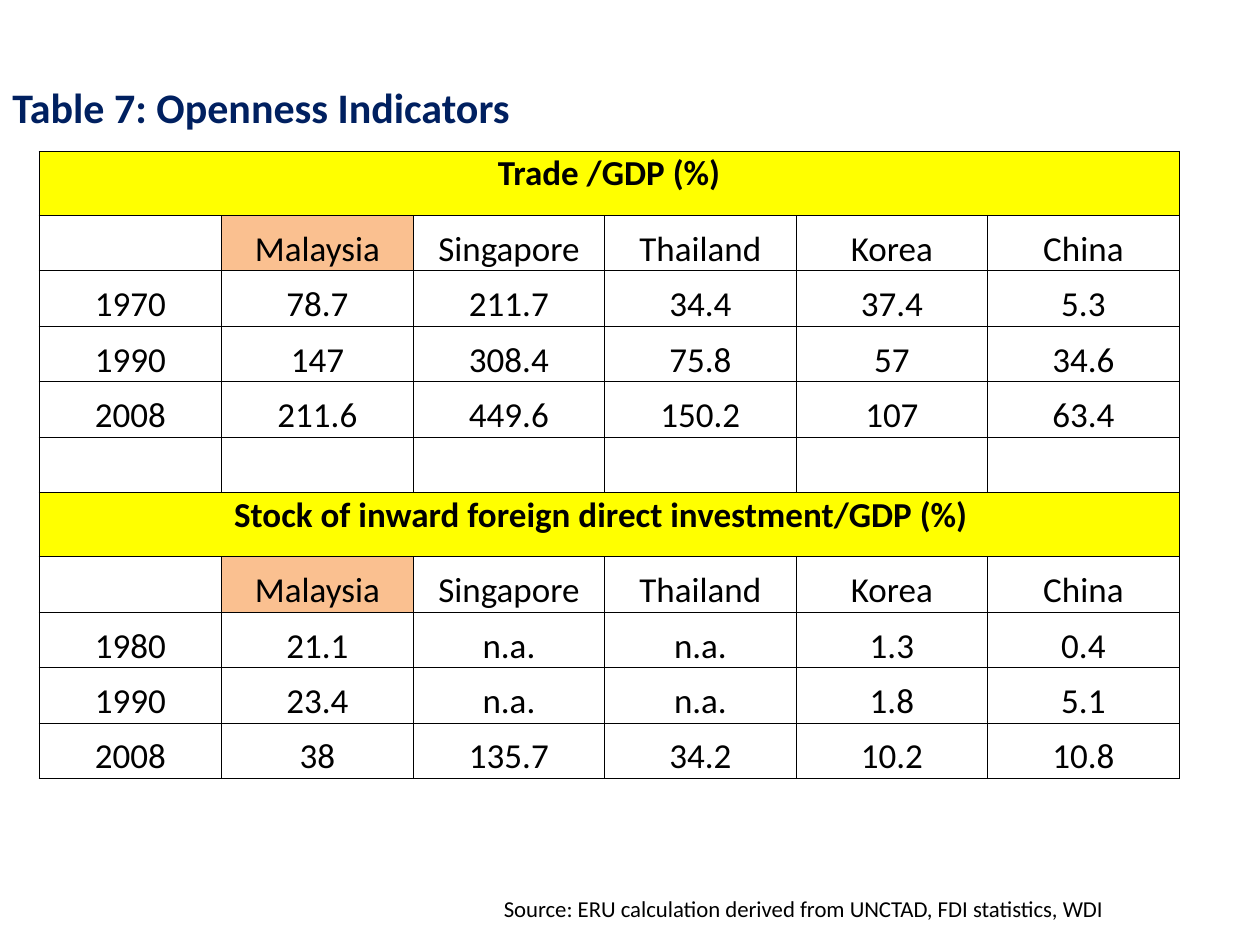
from dataclasses import dataclass

from lxml.etree import SubElement
from pptx import Presentation
from pptx.dml.color import RGBColor
from pptx.enum.text import MSO_ANCHOR as Anchor, PP_ALIGN as Align
from pptx.oxml.ns import qn
from pptx.util import Inches, Pt

SLIDE_W, SLIDE_H = Inches(10), Inches(7.5)
FONT = "Calibri"
BLACK, NAVY, YELLOW, PEACH = "000000", "002060", "FFFF00", "FAC090"
COUNTRIES = ("Malaysia", "Singapore", "Thailand", "Korea", "China")
YEAR_WIDTH, COUNTRY_WIDTH = Inches(1.45), Inches(1.52)
BAND_HEIGHT, ROW_HEIGHT = Inches(0.51), Inches(0.44)
INSET = Inches(0.01)


@dataclass(frozen=True)
class Caption:
    text: str
    left: float
    top: float
    width: float
    height: float
    size: int
    color: str
    bold: bool = False


@dataclass(frozen=True)
class Section:
    heading: str
    years: tuple[tuple[str, ...], ...]
    right_inset: float = 0.01


CAPTIONS = (
    Caption("Table 7: Openness Indicators", 0, 0.08, 1, 0.07, 24, NAVY, True),
    Caption("Source: ERU calculation derived from UNCTAD, FDI statistics, WDI",
            0.39, 0.94, 0.56, 0.04, 13, BLACK),
)
SECTIONS = (
    Section("Trade /GDP (%)", (
        ("1970", "78.7", "211.7", "34.4", "37.4", "5.3"),
        ("1990", "147", "308.4", "75.8", "57", "34.6"),
        ("2008", "211.6", "449.6", "150.2", "107", "63.4"),
    )),
    Section("Stock of inward foreign direct investment/GDP (%)", (
        ("1980", "21.1", "n.a.", "n.a.", "1.3", "0.4"),
        ("1990", "23.4", "n.a.", "n.a.", "1.8", "5.1"),
        ("2008", "38", "135.7", "34.2", "10.2", "10.8"),
    ), 0.14),
)


def rgb(value: str) -> RGBColor:
    return RGBColor.from_string(value)


def set_font(paragraph, size: int, color: str, bold: bool) -> None:
    font = paragraph.font
    font.name, font.size, font.bold = FONT, Pt(size), bold
    font.color.rgb = rgb(color)


def draw_caption(slide, caption: Caption) -> None:
    box = slide.shapes.add_textbox(
        int(SLIDE_W * caption.left), int(SLIDE_H * caption.top),
        int(SLIDE_W * caption.width), int(SLIDE_H * caption.height))
    box.text_frame.word_wrap = True
    paragraph = box.text_frame.paragraphs[0]
    paragraph.text = caption.text
    set_font(paragraph, caption.size, caption.color, caption.bold)


def frame_cell(cell) -> None:
    properties = cell._tc.get_or_add_tcPr()
    for position, side in enumerate(("lnL", "lnR", "lnT", "lnB")):
        for previous in properties.findall(qn(f"a:{side}")):
            properties.remove(previous)
        line = SubElement(properties, qn(f"a:{side}"), w=str(Pt(0.5)))
        fill = SubElement(line, qn("a:solidFill"))
        SubElement(fill, qn("a:srgbClr"), val=BLACK)
        properties.insert(position, line)


def fill_cell(cell, text: str, color: str | None = None, bold: bool = False) -> None:
    if color:
        cell.fill.solid()
        cell.fill.fore_color.rgb = rgb(color)
    else:
        cell.fill.background()
    cell.margin_left = cell.margin_right = cell.margin_top = INSET
    cell.margin_bottom = 0
    cell.vertical_anchor = Anchor.BOTTOM
    paragraph = cell.text_frame.paragraphs[0]
    paragraph.text = text
    paragraph.alignment = Align.CENTER
    set_font(paragraph, 20, BLACK, bold)
    frame_cell(cell)


def draw_row(table, row: int, values: tuple[str, ...]) -> None:
    for column, value in enumerate(values):
        fill_cell(table.cell(row, column), value, PEACH if value == COUNTRIES[0] else None)


def draw_section(table, top: int, section: Section) -> None:
    table.rows[top].height = BAND_HEIGHT
    draw_row(table, top, ("",) * len(table.columns))
    band = table.cell(top, 0)
    band.merge(table.cell(top, len(table.columns) - 1))
    fill_cell(band, section.heading, YELLOW, True)
    band.margin_right = Inches(section.right_inset)
    band.vertical_anchor = Anchor.TOP
    for row, values in enumerate((("", *COUNTRIES), *section.years), top + 1):
        draw_row(table, row, values)


def draw_table(slide) -> None:
    section_rows = 2 + len(SECTIONS[0].years)
    row_count = len(SECTIONS) * (section_rows + 1) - 1
    table = slide.shapes.add_table(
        row_count, 1 + len(COUNTRIES), Inches(0.31), int(SLIDE_H * 0.16),
        YEAR_WIDTH + COUNTRY_WIDTH * len(COUNTRIES), ROW_HEIGHT * row_count).table
    table.first_row = table.horz_banding = False
    for index, column in enumerate(table.columns):
        column.width = COUNTRY_WIDTH if index else YEAR_WIDTH
    for row in table.rows:
        row.height = ROW_HEIGHT
    for index, section in enumerate(SECTIONS):
        draw_section(table, index * (section_rows + 1), section)
    draw_row(table, section_rows, ("",) * len(table.columns))


def main() -> None:
    deck = Presentation()
    deck.slide_width, deck.slide_height = SLIDE_W, SLIDE_H
    slide = deck.slides.add_slide(deck.slide_layouts[6])
    title, source = CAPTIONS
    draw_caption(slide, title)
    draw_table(slide)
    draw_caption(slide, source)
    deck.save("out.pptx")


if __name__ == "__main__":
    main()
